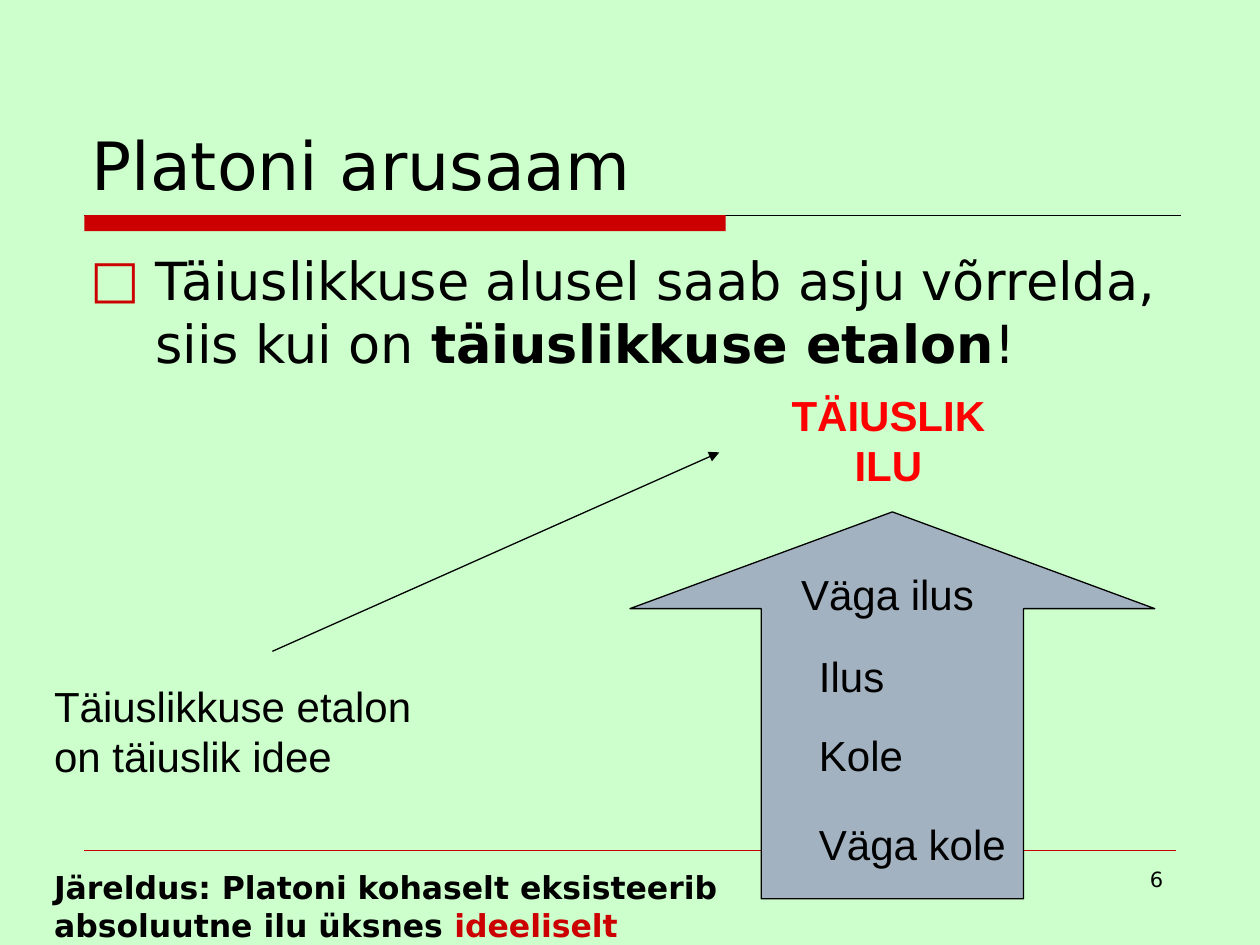
from lxml.etree import SubElement
from pptx import Presentation
from pptx.dml.color import RGBColor
from pptx.enum.shapes import MSO_CONNECTOR as Connector, MSO_SHAPE as Shape
from pptx.enum.text import MSO_ANCHOR as Anchor, MSO_AUTO_SIZE as AutoSize, PP_ALIGN as Align
from pptx.oxml.ns import qn
from pptx.util import Cm, Pt

MINT = RGBColor(0xCC, 0xFF, 0xCC)
CRIMSON = RGBColor(0xCC, 0x00, 0x00)
RED = RGBColor(0xFF, 0x00, 0x00)
BLACK = RGBColor(0x00, 0x00, 0x00)
STEEL = RGBColor(0xA3, 0xB2, 0xC1)

HEADING = {"name": "DejaVu Sans", "size": Pt(38), "color": BLACK}
BODY = HEADING | {"size": Pt(30)}
CONCLUSION = HEADING | {"size": Pt(18), "bold": True}
NUMBER = HEADING | {"size": Pt(12)}
LABEL = {"name": "Arial", "size": Pt(24), "color": BLACK}
IDEAL = LABEL | {"color": RED, "bold": True}


class SlideBuilder:
    def __init__(self, page):
        self.page = page
        page.background.fill.solid()
        page.background.fill.fore_color.rgb = MINT

    def text(self, left, top, width, height, lines, style, align=Align.LEFT,
             anchor=Anchor.TOP, wrap=False):
        """Each line is a list of (words, changes to the style)."""
        box = self.page.shapes.add_textbox(Cm(left), Cm(top), Cm(width), Cm(height))
        frame = box.text_frame
        frame.word_wrap = wrap
        frame.auto_size = AutoSize.NONE if wrap else AutoSize.SHAPE_TO_FIT_TEXT
        frame.vertical_anchor = anchor
        for index, line in enumerate(lines):
            para = frame.add_paragraph() if index else frame.paragraphs[0]
            para.alignment = align
            for words, changes in line:
                span = para.add_run()
                span.text = words
                for key, value in (style | changes).items():
                    if key == "color":
                        span.font.color.rgb = value
                    else:
                        setattr(span.font, key, value)
        return box

    def bullet(self, para, char, color, indent):
        para.space_before = Pt(6)
        props = para._p.get_or_add_pPr()
        props.set("marL", str(Cm(indent)))
        props.set("indent", str(-Cm(indent)))
        tint = SubElement(props, qn("a:buClr"))
        SubElement(tint, qn("a:srgbClr")).set("val", str(color))
        SubElement(props, qn("a:buFont")).set("typeface", "DejaVu Sans")
        SubElement(props, qn("a:buChar")).set("char", char)

    def shape(self, kind, left, top, width, height, fill, outline=None):
        shape = self.page.shapes.add_shape(kind, Cm(left), Cm(top), Cm(width), Cm(height))
        shape.shadow.inherit = False
        shape.fill.solid()
        shape.fill.fore_color.rgb = fill
        if outline is None:
            shape.line.fill.background()
        else:
            shape.line.color.rgb = outline
            shape.line.width = Pt(0.75)
        return shape

    def line(self, x1, y1, x2, y2, color, width=0.75, arrow=False):
        line = self.page.shapes.add_connector(
            Connector.STRAIGHT, Cm(x1), Cm(y1), Cm(x2), Cm(y2))
        line.line.color.rgb = color
        line.line.width = Pt(width)
        if arrow:
            SubElement(line.line._get_or_add_ln(), qn("a:tailEnd")).set("type", "triangle")
        SubElement(line._element.spPr, qn("a:effectLst"))


def main():
    deck = Presentation()
    deck.slide_width, deck.slide_height = Cm(25.4), Cm(19.05)
    slide = SlideBuilder(deck.slides.add_slide(deck.slide_layouts[6]))

    # Rules and page number
    slide.line(1.7, 4.34, 23.8, 4.34, BLACK)
    slide.shape(Shape.RECTANGLE, 1.7, 4.34, 12.93, 0.32, CRIMSON)
    slide.line(1.7, 17.15, 23.7, 17.15, CRIMSON, 0.25)
    slide.text(18.2, 17.35, 5.5, 1.32, [[("6", {})]], NUMBER, Align.RIGHT, wrap=True)

    # Title and statement
    slide.text(1.6, 0.85, 22.23, 3.38, [[("Platoni arusaam", {})]], HEADING,
               anchor=Anchor.BOTTOM, wrap=True)
    statement = slide.text(1.58, 4.88, 22.23, 11.85, [[
        ("Täiuslikkuse alusel saab asju võrrelda, siis kui on ", {}),
        ("täiuslikkuse etalon", {"bold": True}),
        ("!", {})]], BODY, wrap=True)
    slide.bullet(statement.text_frame.paragraphs[0], "□", CRIMSON, 1.3)

    # Scale of beauty
    scale = slide.shape(Shape.UP_ARROW, 12.7, 10.32, 10.58, 7.8, STEEL, BLACK)
    scale.adjustments[0], scale.adjustments[1] = 0.5, 0.25
    slide.text(15.7, 7.72, 4.42, 2.29, [[("TÄIUSLIK", {})], [("ILU", {})]],
               IDEAL, Align.CENTER)
    for words, left, top, width in [("Väga ilus", 15.9, 11.33, 3.99),
                                    ("Ilus", 16.26, 12.98, 1.83),
                                    ("Kole", 16.26, 14.58, 2.21),
                                    ("Väga kole", 16.26, 16.38, 4.29)]:
        slide.text(left, top, width, 1.27, [[(words, {})]], LABEL)

    # Standard pointing to the ideal
    slide.text(0.84, 13.59, 7.72, 2.29,
               [[("Täiuslikkuse etalon", {})], [("on täiuslik idee", {})]], LABEL)
    slide.line(5.49, 13.13, 14.5, 9.12, BLACK, arrow=True)

    # Conclusion
    slide.text(0.84, 17.37, 13.92, 1.78, [
        [("Järeldus: Platoni kohaselt eksisteerib", {})],
        [("absoluutne ilu üksnes ", {}), ("ideeliselt", {"color": CRIMSON})]], CONCLUSION)

    deck.save("out.pptx")


if __name__ == "__main__":
    main()
